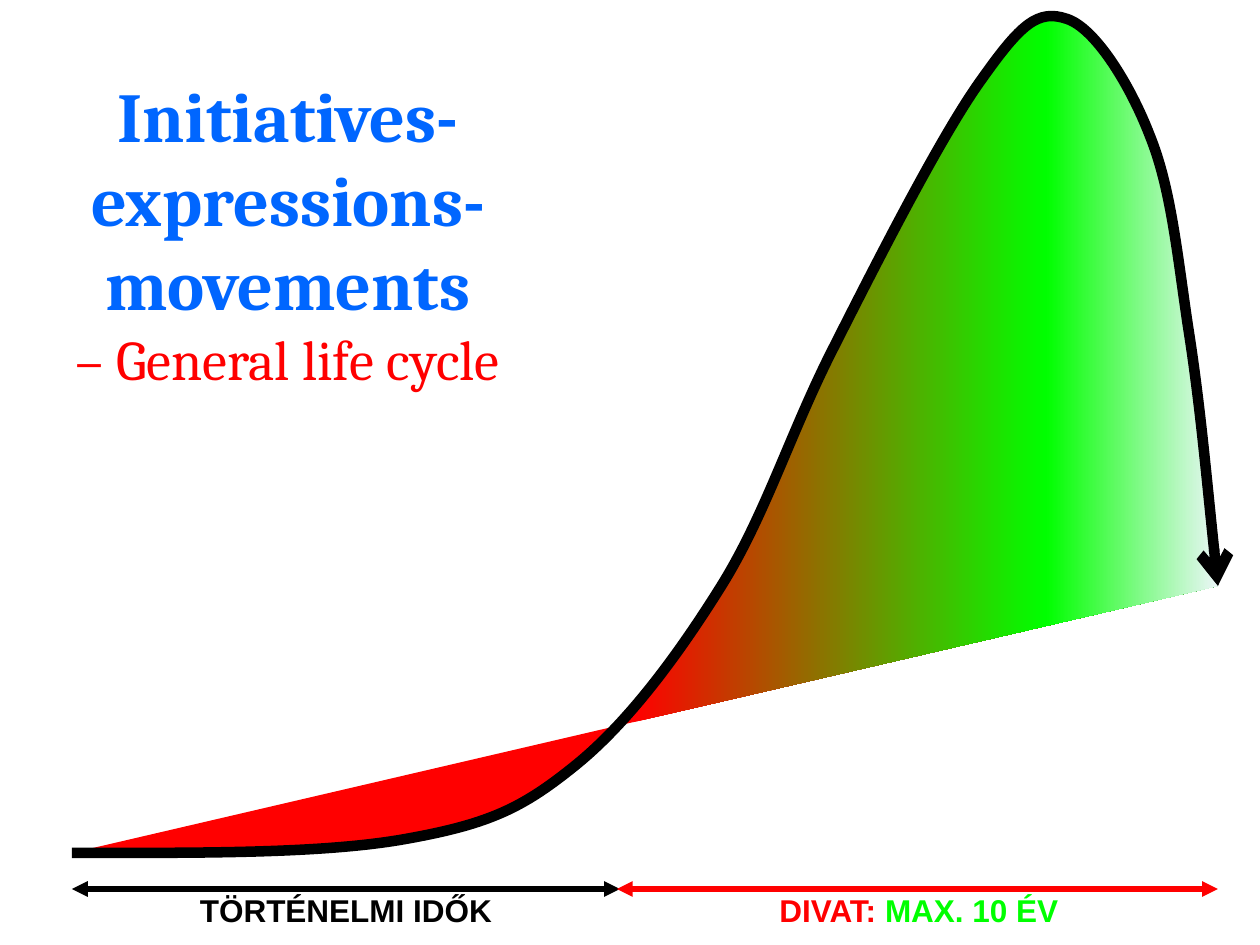
from lxml import etree
from pptx import Presentation
from pptx.dml.color import RGBColor
from pptx.enum.shapes import MSO_CONNECTOR
from pptx.enum.text import MSO_ANCHOR, PP_ALIGN
from pptx.oxml.ns import qn
from pptx.util import Pt

STRAIGHT = MSO_CONNECTOR.STRAIGHT
CENTER = PP_ALIGN.CENTER
TOP = MSO_ANCHOR.TOP
EMU_PER_PX = 914400 / 126
COLORS = {"black": "000000", "red": "FF0000", "green": "00FF00", "blue": "0066FF", "pale": "EBF6F7"}

LIFE_CYCLE = [
    (72, 853),
    (197, 853), (323, 854), (406, 839),
    (490, 824), (523, 808), (576, 765),
    (629, 722), (679, 654), (722, 585),
    (766, 514), (791, 431), (834, 347),
    (877, 262), (942, 134), (982, 79),
    (1021, 24), (1038, 9), (1067, 19),
    (1095, 28), (1130, 84), (1150, 136),
    (1171, 188), (1177, 252), (1188, 326),
    (1200, 402), (1208, 494), (1218, 586),
]
GRADIENT = [(0, "red"), (49, "red"), (85, "green"), (100, "pale")]


def emu(px):
    return round(px * EMU_PER_PX)


def rgb(name):
    return RGBColor.from_string(COLORS[name])


class SlideBuilder:
    """Draws styled elements on the current slide."""

    def __init__(self, presentation):
        self.slide = presentation.slides.add_slide(presentation.slide_layouts[6])
        self.shapes = self.slide.shapes

    def style_line(self, shape, color, width, **ends):
        shape.line.color.rgb = rgb(color)
        shape.line.width = Pt(width)
        line = next(shape._element.iter(qn("a:ln")))
        for end, kind in ends.items():
            etree.SubElement(line, qn(f"a:{end}"), type=kind)

    def add_runs(self, paragraph, runs, font, size, bold):
        paragraph.alignment = CENTER
        for text, color in runs:
            run = paragraph.add_run()
            run.text = text
            run.font.name = font
            run.font.size = Pt(size)
            run.font.bold = bold
            run.font.color.rgb = rgb(color)

    def curve(self, points, stops, color, width):
        start, *controls = [(emu(x), emu(y)) for x, y in points]
        builder = self.shapes.build_freeform(*start)
        builder.add_line_segments(controls, close=False)
        shape = builder.convert_to_shape()
        shape.shadow.inherit = False
        segments = list(shape._element.iter(qn("a:lnTo")))
        for index in range(0, len(segments), 3):
            bezier = etree.Element(qn("a:cubicBezTo"))
            segments[index].addprevious(bezier)
            for segment in segments[index:index + 3]:
                bezier.append(segment[0])
                segment.getparent().remove(segment)
        shape.fill.gradient()
        shape.fill.gradient_angle = 0
        stop_list = next(shape._element.iter(qn("a:gsLst")))
        for stop in list(stop_list):
            stop_list.remove(stop)
        for percent, name in stops:
            stop = etree.SubElement(stop_list, qn("a:gs"), pos=str(percent * 1000))
            etree.SubElement(stop, qn("a:srgbClr"), val=COLORS[name])
        self.style_line(shape, color, width, tailEnd="arrow")

    def span_arrow(self, left, right, y, color):
        connector = self.shapes.add_connector(STRAIGHT, emu(left), emu(y), emu(right), emu(y))
        self.style_line(connector, color, 3, headEnd="triangle", tailEnd="triangle")
        etree.SubElement(connector._element.spPr, qn("a:effectLst"))

    def label_table(self, left, top, widths, height, labels):
        frame = self.shapes.add_table(1, len(widths), emu(left), emu(top), emu(sum(widths)), emu(height))
        table = frame.table
        table.first_row = table.horz_banding = False
        for column, width, cell, runs in zip(table.columns, widths, table.rows[0].cells, labels):
            column.width = emu(width)
            cell.fill.background()
            cell.vertical_anchor = TOP
            self.add_runs(cell.text_frame.paragraphs[0], runs, "Arial", 18, True)

    def title(self, left, top, width, height, heading, subtitle):
        frame = self.shapes.add_textbox(emu(left), emu(top), emu(width), emu(height)).text_frame
        frame.word_wrap = True
        self.add_runs(frame.paragraphs[0], [(heading, "blue")], "Cambria", 40, True)
        self.add_runs(frame.add_paragraph(), [(subtitle, "red")], "Cambria", 32, False)


def main():
    presentation = Presentation()
    presentation.slide_width = emu(1260)
    presentation.slide_height = emu(945)
    builder = SlideBuilder(presentation)
    builder.curve(LIFE_CYCLE, GRADIENT, "black", 6)
    builder.label_table(72, 888, [548, 598], 52, [
        [("TÖRTÉNELMI IDŐK", "black")],
        [("DIVAT: ", "red"), ("MAX. 10 ÉV", "green")],
    ])
    builder.span_arrow(72, 620, 889, "black")
    builder.span_arrow(617, 1218, 889, "red")
    builder.title(0, 66, 576, 271, "Initiatives-expressions-movements", "– General life cycle")
    presentation.save("out.pptx")


if __name__ == "__main__":
    main()
